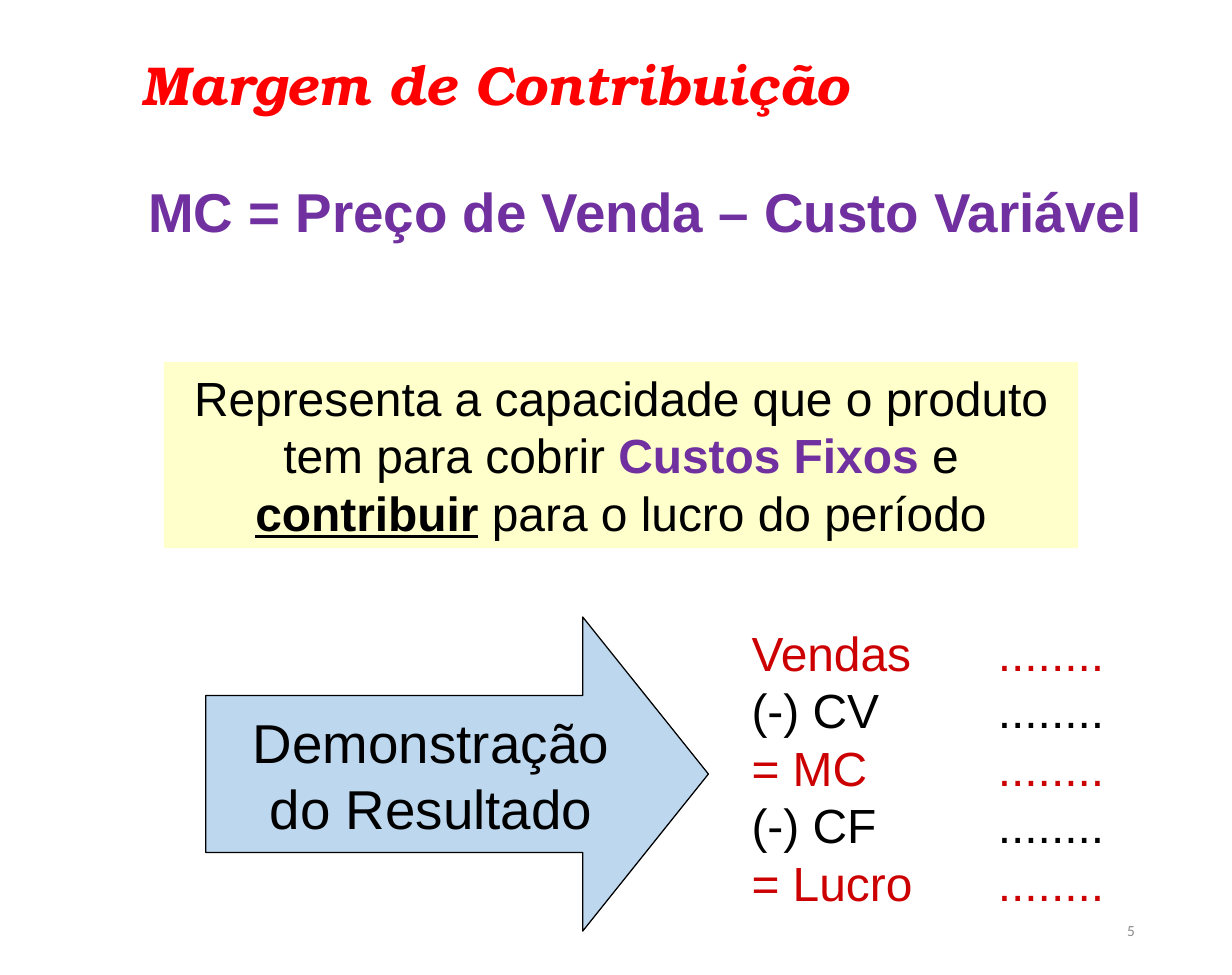
from dataclasses import dataclass
from typing import Any

import pptx
import pptx.dml.color
import pptx.enum.shapes
import pptx.enum.text
import pptx.oxml
import pptx.oxml.ns
import pptx.util
from pptx.util import Inches

ALIGN = pptx.enum.text.PP_ALIGN
ANCHOR = pptx.enum.text.MSO_ANCHOR
SHAPE = pptx.enum.shapes.MSO_SHAPE

COLORS = {
    "title": "FF0000",
    "accent": "7030A0",
    "text": "000000",
    "result": "CC0000",
    "number": "8C8C8C",
    "note": "FFFFCC",
    "arrow": "BDD7EE",
}


@dataclass
class Box:
    left: float
    top: float
    width: float
    height: float

    def lengths(self) -> list[Any]:
        return [Inches(v) for v in (self.left, self.top, self.width, self.height)]


@dataclass
class StatementLine:
    label: str
    color: str
    tabs: int = 1


STATEMENT = [
    StatementLine("Vendas", "result"),
    StatementLine("(-) CV", "text"),
    StatementLine("= MC", "result", tabs=2),
    StatementLine("(-) CF", "text"),
    StatementLine("= Lucro", "result"),
]


def rgb(name: str) -> Any:
    return pptx.dml.color.RGBColor.from_string(COLORS[name])


def add_run(p: Any, text: str, *, size: float, color: str = "text", font: str = "Arial",
            bold: bool = False, italic: bool = False, underline: bool = False) -> None:
    r = p.add_run()
    r.text = text
    f = r.font
    f.name, f.size = font, pptx.util.Pt(size)
    f.bold, f.italic, f.underline = bold, italic, underline
    f.color.rgb = rgb(color)


def prepare_frame(s: Any, anchor: Any, align: Any) -> Any:
    """Set wrapping, anchor and alignment, and return the first paragraph."""
    tf = s.text_frame
    tf.word_wrap = True
    tf.auto_size = pptx.enum.text.MSO_AUTO_SIZE.NONE
    tf.vertical_anchor = anchor
    tf.paragraphs[0].alignment = align
    return tf.paragraphs[0]


def place(s: Any, box: Box) -> None:
    s.left, s.top, s.width, s.height = box.lengths()


def add_text(slide: Any, box: Box, align: Any = ALIGN.CENTER) -> Any:
    s = slide.shapes.add_textbox(*box.lengths())
    return prepare_frame(s, ANCHOR.MIDDLE, align)


def add_filled(slide: Any, kind: Any, box: Box, fill: str, outlined: bool = False) -> Any:
    s = slide.shapes.add_shape(kind, *box.lengths())
    s.shadow.inherit = False
    s.fill.solid()
    s.fill.fore_color.rgb = rgb(fill)
    if outlined:
        s.line.color.rgb = rgb("text")
        s.line.width = pptx.util.Pt(0.75)
    else:
        s.line.fill.background()
    return s


def set_plain_list(p: Any, tab_size: float) -> None:
    """Remove the bullet and indent, and space the default tabs in inches."""
    p.space_before = pptx.util.Pt(0)
    props = p._p.get_or_add_pPr()
    props.set("marL", "0")
    props.set("indent", "0")
    props.set("defTabSz", str(int(Inches(tab_size))))
    props.append(pptx.oxml.parse_xml(f"<a:buNone {pptx.oxml.ns.nsdecls('a')}/>"))


def add_statement(body: Any) -> None:
    place(body, Box(6, 5.01, 3.67, 2.44))
    p = prepare_frame(body, ANCHOR.TOP, ALIGN.LEFT)
    for i, line in enumerate(STATEMENT):
        if i:
            p = body.text_frame.add_paragraph()
        set_plain_list(p, tab_size=1)
        add_run(p, line.label + "\t" * line.tabs + "........", size=28, color=line.color)


def main() -> None:
    prs = pptx.Presentation()
    prs.slide_width, prs.slide_height = Inches(10), Inches(95 / 12)
    slide = prs.slides.add_slide(prs.slide_layouts[1])
    title, body = slide.placeholders

    place(title, Box(1.05, 0.36, 8.74, 0.64))
    p = prepare_frame(title, ANCHOR.TOP, ALIGN.LEFT)
    add_run(p, "Margem de Contribuição", size=32, color="title",
            font="TeX Gyre Bonum", bold=True, italic=True)

    p = add_text(slide, Box(1.06, 1.4, 8.36, 0.62))
    add_run(p, "MC = Preço de Venda – Custo Variável", size=32, color="accent", bold=True)

    note = add_filled(slide, SHAPE.RECTANGLE, Box(1.33, 2.94, 7.42, 1.51), "note")
    p = prepare_frame(note, ANCHOR.TOP, ALIGN.CENTER)
    add_run(p, "Representa a capacidade que o produto tem para cobrir ", size=28)
    add_run(p, "Custos Fixos ", size=28, color="accent", bold=True)
    add_run(p, "e ", size=28)
    add_run(p, "contribuir", size=28, bold=True, underline=True)
    add_run(p, " para o lucro do período", size=28)

    add_statement(body)

    arrow = add_filled(slide, SHAPE.RIGHT_ARROW, Box(1.67, 5.01, 4.08, 2.55), "arrow", outlined=True)
    arrow.adjustments[0], arrow.adjustments[1] = 0.5, 0.4
    p = add_text(slide, Box(1.75, 5.7, 3.5, 1.18))
    add_run(p, "Demonstração do Resultado", size=32)

    p = add_text(slide, Box(7.06, 7.34, 2.25, 0.42), ALIGN.RIGHT)
    add_run(p, "5", size=9, color="number", font="Calibri")

    prs.save("out.pptx")


if __name__ == "__main__":
    main()
